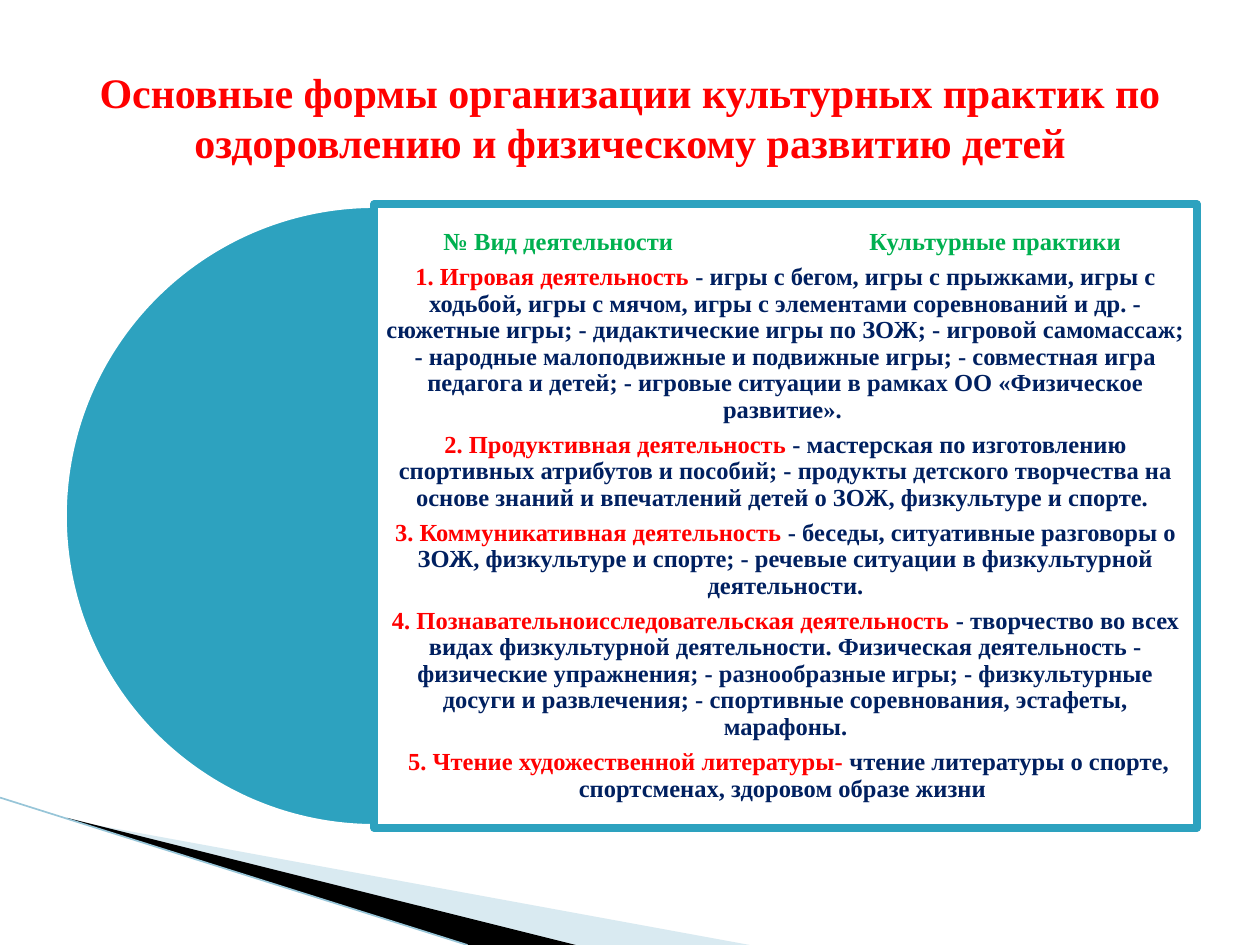
"""Build a slide on cultural practices for children's health and physical development."""
from lxml import etree
from pptx import Presentation
from pptx.dml.color import RGBColor
from pptx.enum.shapes import MSO_CONNECTOR, MSO_SHAPE
from pptx.enum.text import MSO_ANCHOR, PP_ALIGN
from pptx.oxml.ns import qn
from pptx.util import Inches, Pt

STRAIGHT = MSO_CONNECTOR.STRAIGHT
PIE, RECTANGLE = MSO_SHAPE.PIE, MSO_SHAPE.RECTANGLE
MIDDLE = MSO_ANCHOR.MIDDLE
CENTER, LEFT = PP_ALIGN.CENTER, PP_ALIGN.LEFT
WHITE = RGBColor(0xFF, 0xFF, 0xFF)
BLACK = RGBColor(0x00, 0x00, 0x00)
TEAL = RGBColor(0x2D, 0xA2, 0xBF)
PALE_BLUE = RGBColor(0xA0, 0xCB, 0xDC)
LINE_BLUE = RGBColor(0x97, 0xC5, 0xD8)
RED = RGBColor(0xFF, 0x00, 0x00)
GREEN = RGBColor(0x00, 0xB0, 0x50)
NAVY = RGBColor(0x00, 0x20, 0x60)


def add_text(paragraph, text, color, size=14, align=CENTER):
    paragraph.alignment = align
    run = paragraph.add_run()
    run.text = text
    run.font.name = "Times New Roman"
    run.font.size = Pt(size)
    run.font.bold = True
    run.font.color.rgb = color


def paint(shape, color, alpha=100):
    shape.shadow.inherit = False
    shape.fill.solid()
    shape.fill.fore_color.rgb = color
    if alpha < 100:
        color_node = shape.fill._xPr.find(qn("a:solidFill"))[0]
        etree.SubElement(color_node, qn("a:alpha"), val=str(alpha * 1000))


prs = Presentation()
prs.slide_width, prs.slide_height = Inches(10), Inches(7.5)
slide = prs.slides.add_slide(prs.slide_layouts[6])
shapes = slide.shapes

wedges = [
    ([(0.55, 6.51), (5.95, 7.5), (4.56, 7.5), (0.55, 6.5)], PALE_BLUE, 40),
    ([(0.53, 6.49), (4.57, 7.5), (3.72, 7.5), (0.54, 6.5)], BLACK, 100),
]
for corners, color, alpha in wedges:
    points = [(Inches(x), Inches(y)) for x, y in corners]
    builder = shapes.build_freeform(*points[0], scale=1.0)
    builder.add_line_segments(points[1:], close=True)
    wedge = builder.convert_to_shape()
    paint(wedge, color, alpha)
    wedge.line.fill.background()

slope = shapes.add_connector(STRAIGHT, Inches(0), Inches(6.33), Inches(3.71), Inches(7.5))
slope.line.color.rgb = LINE_BLUE
slope.line.width = Pt(0.95)
etree.SubElement(slope._element.spPr, qn("a:effectLst"))

half_disc = shapes.add_shape(PIE, Inches(0.5), Inches(1.62), Inches(4.95), Inches(4.95))
half_disc.adjustments[0] = 54
half_disc.adjustments[1] = 162
paint(half_disc, TEAL)
half_disc.line.color.rgb = WHITE

practices = shapes.add_shape(RECTANGLE, Inches(2.97), Inches(1.62), Inches(6.53), Inches(4.95))
paint(practices, WHITE, 90)
practices.line.color.rgb = TEAL
for outlined in (half_disc, practices):
    outlined.line.width = Pt(4.33)

frame = practices.text_frame
frame.word_wrap = True
frame.vertical_anchor = MIDDLE
frame.margin_left = frame.margin_right = Inches(0.06)
frame.margin_top = frame.margin_bottom = Inches(0.06)

heading = frame.paragraphs[0]
tab_stops = etree.SubElement(heading._p.get_or_add_pPr(), qn("a:tabLst"))
for position in (0.49, 3.87):
    etree.SubElement(tab_stops, qn("a:tab"), pos=str(Inches(position)), algn="l")
add_text(heading, "\t№ Вид деятельности\tКультурные практики", GREEN, align=LEFT)

activities = [
    ("1. Игровая деятельность ",
     "- игры с бегом, игры с прыжками, игры с ходьбой, игры с мячом, игры с элементами "
     "соревнований и др. - сюжетные игры; - дидактические игры по ЗОЖ; - игровой самомассаж; "
     "- народные малоподвижные и подвижные игры; - совместная игра педагога и детей; "
     "- игровые ситуации в рамках ОО «Физическое развитие». "),
    ("2. Продуктивная деятельность",
     " - мастерская по изготовлению спортивных атрибутов и пособий; - продукты детского "
     "творчества на основе знаний и впечатлений детей о ЗОЖ, физкультуре и спорте. "),
    ("3. Коммуникативная деятельность ",
     "- беседы, ситуативные разговоры о ЗОЖ, физкультуре и спорте; "
     "- речевые ситуации в физкультурной деятельности."),
    ("4. Познавательноисследовательская деятельность ",
     "- творчество во всех видах физкультурной деятельности. Физическая деятельность "
     "- физические упражнения; - разнообразные игры; - физкультурные досуги и развлечения; "
     "- спортивные соревнования, эстафеты, марафоны."),
    (" 5. Чтение художественной литературы- ",
     "чтение литературы о спорте, спортсменах, здоровом образе жизни "),
]
for activity, examples in activities:
    paragraph = frame.add_paragraph()
    add_text(paragraph, activity, RED)
    add_text(paragraph, examples, NAVY)
for paragraph in frame.paragraphs:
    paragraph.line_spacing = 0.9
    paragraph.space_after = Pt(4.9)

title = shapes.add_textbox(Inches(0.5), Inches(0.3), Inches(9), Inches(1.25)).text_frame
title.word_wrap = True
title.vertical_anchor = MIDDLE
add_text(
    title.paragraphs[0],
    "Основные формы организации культурных практик по оздоровлению и физическому развитию детей",
    RED,
    size=24,
)

prs.save("out.pptx")
